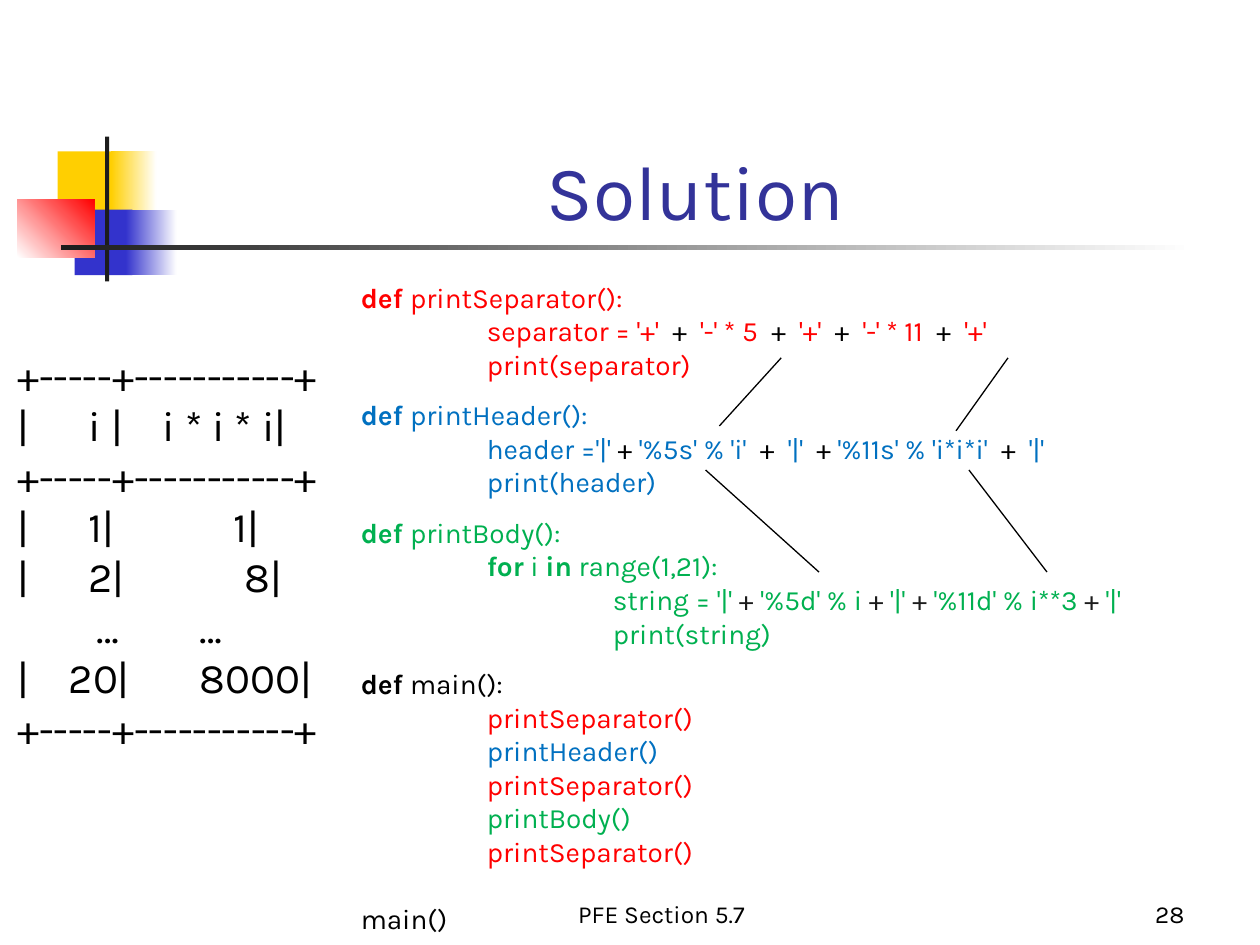
import pptx
import pptx.util
import pptx.dml.color
import pptx.enum.shapes
import pptx.enum.text
import pptx.oxml

Pt = pptx.util.Pt
RGBColor = pptx.dml.color.RGBColor
ANCHOR = pptx.enum.text.MSO_ANCHOR
ALIGN = pptx.enum.text.PP_ALIGN
AUTO_SIZE = pptx.enum.text.MSO_AUTO_SIZE

FONT = "Karla"
TAB_WIDTH = Pt(72)
BLACK = RGBColor(0, 0, 0)
WHITE = RGBColor(0xFF, 0xFF, 0xFF)
CHARCOAL = RGBColor(0x1C, 0x1C, 0x1C)
NAVY = RGBColor(0x33, 0x33, 0x99)
INDIGO = RGBColor(0x33, 0x33, 0xCC)
YELLOW = RGBColor(0xFF, 0xCF, 0x01)
RED = RGBColor(0xFF, 0, 0)
BLUE = RGBColor(0, 0x70, 0xC0)
GREEN = RGBColor(0, 0xB0, 0x50)

ORNAMENT = [
    ((33, 86.5, 34.5, 37.5), (YELLOW,), 0),
    ((63.5, 86.5, 26, 37.5), (YELLOW, WHITE), 0),
    ((42.7, 119.8, 33, 37.5), (INDIGO,), 0),
    ((72, 119.8, 29, 37.5), (INDIGO, WHITE), 0),
    ((10, 113.8, 44, 33.2), (WHITE, RED), 45),
    ((60, 78, 2.4, 82.8), (CHARCOAL,), 0),
    ((34.6, 140.2, 648, 2.4), (CHARCOAL, WHITE), 0),
]

RULE = "+-----+-----------+"
PRINTED_TABLE = [
    RULE,
    "|      i |    i * i * i|",
    RULE,
    "|      1|            1|",
    "|      2|            8|",
    "        …        …",
    "|    20|       8000|",
    RULE,
]

SECTION_GAP = 9.6
CALL_GAP = 19.2


def call(name, color):
    return 0, [("\t", BLACK), (name, color)]


def definition(name, color, gap):
    return gap, [("def ", color, True), (name, color)]


def joined(color, plus_color, *pieces):
    return 0, [(piece, plus_color if piece.strip() == "+" else color)
               for piece in pieces]


SEPARATOR_CALL = call("printSeparator()", RED)
PROGRAM = [
    definition("printSeparator():", RED, 0),
    joined(RED, BLACK, "\tseparator = '+'  ", "+ ", " '-' * 5  ", "+ ",
           " '+'  ", "+ ", " '-' * 11  ", "+  ", "'+'"),
    (0, [("\tprint(separator)", RED)]),
    definition("printHeader():", BLUE, SECTION_GAP),
    joined(BLUE, BLACK, "\theader ='|' ", "+ ", "'%5s' % 'i'  ", "+ ",
           " '|'  ", "+ ", "'%11s' % 'i*i*i'  ", "+ ", " '|'"),
    (0, [("\tprint(header)", BLUE)]),
    definition("printBody():", GREEN, SECTION_GAP),
    (0, [("\t", GREEN), ("for", GREEN, True), (" i ", GREEN),
         ("in", GREEN, True), (" range(1,21):", GREEN)]),
    joined(GREEN, CHARCOAL, "\t\tstring = '|' ", "+ ", "'%5d' % i ", "+",
           " '|' ", "+ ", "'%11d' % i**3 ", "+ ", "'|'"),
    (0, [("\t\tprint(string)", GREEN)]),
    definition("main():", BLACK, SECTION_GAP),
    SEPARATOR_CALL,
    call("printHeader()", BLUE),
    SEPARATOR_CALL,
    call("printBody()", GREEN),
    SEPARATOR_CALL,
    (CALL_GAP, [("main()", BLACK)]),
]

FORMAT_LINKS = [
    (446.4, 204.5, 411.1, 243.4),
    (576, 204.5, 546.3, 246.2),
    (403.2, 268.6, 468, 326.9),
    (553.7, 268.6, 598.3, 326.9),
]


def add_run(paragraph, size, text, color, bold=False):
    run = paragraph.add_run()
    run.text = text
    run.font.name = FONT
    run.font.size = Pt(size)
    run.font.bold = bold
    run.font.color.rgb = color


def write_lines(frame, lines, size, align=ALIGN.LEFT):
    for index, (gap, runs) in enumerate(lines):
        paragraph = frame.add_paragraph() if index else frame.paragraphs[0]
        paragraph.alignment = align
        paragraph.space_before = Pt(gap)
        paragraph._p.get_or_add_pPr().set("defTabSz", str(TAB_WIDTH))
        for run in runs:
            add_run(paragraph, size, *run)


def add_text(slide, box, lines, size, align=ALIGN.LEFT, anchor=ANCHOR.TOP,
             wrap=True, auto_size=AUTO_SIZE.NONE):
    frame = slide.shapes.add_textbox(*map(Pt, box)).text_frame
    frame.word_wrap = wrap
    frame.auto_size = auto_size
    frame.vertical_anchor = anchor
    write_lines(frame, lines, size, align)


def add_title(slide, text):
    title = slide.shapes.title
    title.left, title.top, title.width, title.height = map(
        Pt, (90.7, 48.5, 613.4, 90))
    frame = title.text_frame
    frame.auto_size = AUTO_SIZE.NONE
    frame.vertical_anchor = ANCHOR.BOTTOM
    write_lines(frame, [(0, [(text, NAVY)])], 44, ALIGN.CENTER)


def add_block(slide, box, colors, angle):
    block = slide.shapes.add_shape(
        pptx.enum.shapes.MSO_SHAPE.RECTANGLE, *map(Pt, box))
    block.shadow.inherit = False
    block.line.fill.background()
    if len(colors) == 1:
        block.fill.solid()
        block.fill.fore_color.rgb = colors[0]
        return
    block.fill.gradient()
    block.fill.gradient_angle = angle
    for stop, color in zip(block.fill.gradient_stops, colors):
        stop.color.rgb = color


def add_link(slide, ends):
    link = slide.shapes.add_connector(
        pptx.enum.shapes.MSO_CONNECTOR.STRAIGHT, *map(Pt, ends))
    link.line.color.rgb = BLACK
    link.line.width = Pt(0.75)
    properties = link._element.spPr
    properties.append(pptx.oxml.parse_xml(
        '<a:effectLst xmlns:a='
        '"http://schemas.openxmlformats.org/drawingml/2006/main"/>'))


def main():
    deck = pptx.Presentation()
    deck.slide_width, deck.slide_height = Pt(720), Pt(540)
    slide = deck.slides.add_slide(deck.slide_layouts.get_by_name("Title Only"))
    for block in ORNAMENT:
        add_block(slide, *block)
    add_title(slide, "Solution")
    add_text(slide, (264, 498, 228, 36),
             [(0, [("PFE Section 5.7", BLACK)])], 14, ALIGN.CENTER, ANCHOR.BOTTOM)
    add_text(slide, (534, 498, 150, 36),
             [(0, [("28", BLACK)])], 14, ALIGN.RIGHT, ANCHOR.BOTTOM)
    add_text(slide, (2.7, 196.1, 212.4, 239.8),
             [(0, [(row, BLACK)]) for row in PRINTED_TABLE], 24,
             wrap=False, auto_size=AUTO_SIZE.SHAPE_TO_FIT_TEXT)
    add_text(slide, (199.1, 156.6, 521.3, 406.8), PROGRAM, 16,
             auto_size=AUTO_SIZE.SHAPE_TO_FIT_TEXT)
    for ends in FORMAT_LINKS:
        add_link(slide, ends)
    deck.save("out.pptx")


if __name__ == "__main__":
    main()
